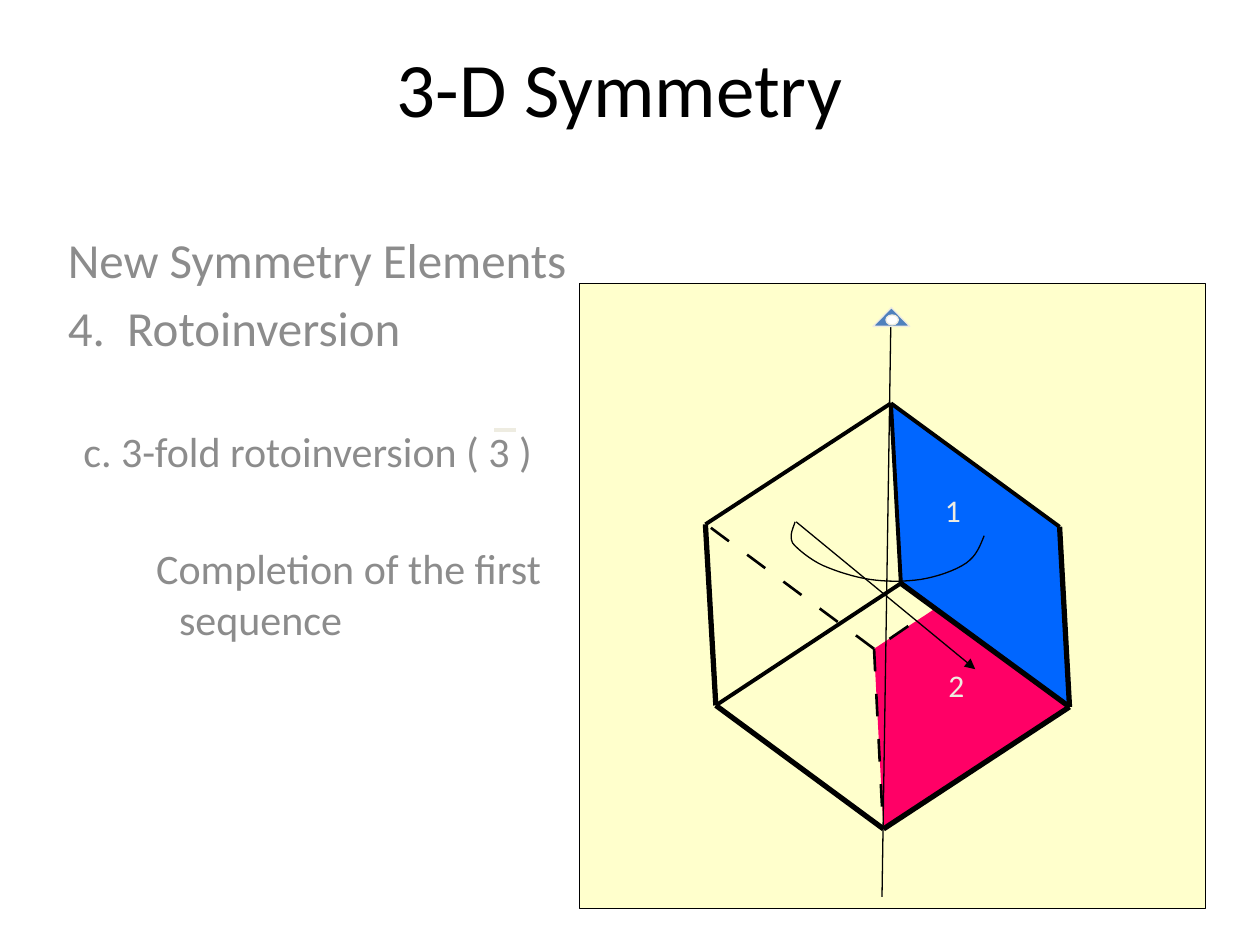
from lxml.etree import SubElement
from pptx import Presentation
from pptx.dml.color import RGBColor
from pptx.enum.shapes import MSO_CONNECTOR, MSO_SHAPE
from pptx.enum.text import MSO_ANCHOR, PP_ALIGN
from pptx.oxml.ns import qn
from pptx.util import Cm, Pt

FONT = "Calibri"
BLACK, GREY, PALE = "000000", "8C8C8C", "EEECE1"

# Cube corners, in cm
TOP, FRONT, BOTTOM, BACK = (17.96, 8.13), (18.16, 11.76), (17.81, 16.71), (17.62, 13.08)
LEFT_UP, LEFT_LOW = (14.22, 10.57), (14.43, 14.22)
RIGHT_UP, RIGHT_LOW = (21.36, 10.62), (21.56, 14.25)

# Rotation arrow: start, then two control points and an end for each curve
ARC_START = (19.84, 10.8)
ARC_CURVES = [
    ((19.76, 11.0), (19.69, 11.2), (19.48, 11.35)),
    ((19.25, 11.51), (18.87, 11.63), (18.57, 11.68)),
    ((18.24, 11.73), (17.86, 11.73), (17.53, 11.68)),
    ((17.2, 11.63), (16.84, 11.51), (16.59, 11.4)),
    ((16.33, 11.28), (16.08, 11.07), (15.98, 10.95)),
    ((15.9, 10.8), (16.0, 10.62), (16.03, 10.52)),
]

# Text, size, left margin, first-line indent, space before (pt)
BODY = [
    ("New Symmetry Elements", 28, 0, 0, 0),
    ("4.  Rotoinversion", 28, 0, 0, 5.5),
    ("c. 3-fold rotoinversion ( 3 )", 24, 1.45, -1.14, 39.5),
    ("Completion of the first sequence", 24, 2.24, -0.46, 38),
]


def rgb(color):
    return RGBColor.from_string(color)


def style(sp, fill=None, line=None, width=0.75):
    sp.shadow.inherit = False
    if fill:
        sp.fill.solid()
        sp.fill.fore_color.rgb = rgb(fill)
    else:
        sp.fill.background()
    if line:
        sp.line.color.rgb = rgb(line)
        sp.line.width = Pt(width)
    else:
        sp.line.fill.background()


def add_preset(s, kind, box, fill, line):
    sp = s.shapes.add_shape(kind, *map(Cm, box))
    style(sp, fill, line)


def add_outline(s, points, fill=None, line=None, close=True):
    pts = [(Cm(x), Cm(y)) for x, y in points]
    builder = s.shapes.build_freeform(*pts[0])
    builder.add_line_segments(pts[1:], close=close)
    style(builder.convert_to_shape(), fill, line)


def add_line(s, start, end, width=0.75, color=BLACK, arrow=False):
    cn = s.shapes.add_connector(MSO_CONNECTOR.STRAIGHT, *map(Cm, start + end))
    cn.line.color.rgb = rgb(color)
    cn.line.width = Pt(width)
    if arrow:
        SubElement(cn.line._get_or_add_ln(), qn("a:tailEnd"), type="triangle")
    SubElement(cn._element.spPr, qn("a:effectLst"))


def add_dashes(s, start, end, count):
    """Draw equal dashes with gaps of the same length."""
    steps = 2 * count - 1

    def at(i):
        return tuple(a + (b - a) * i / steps for a, b in zip(start, end))

    for i in range(0, steps, 2):
        add_line(s, at(i), at(i + 1), 1.5)


def add_run(p, text, size, color):
    r = p.add_run()
    r.text = text
    r.font.name = FONT
    r.font.size = Pt(size)
    r.font.color.rgb = rgb(color)


def add_title(s, text):
    sp = s.shapes.title
    sp.left, sp.top, sp.width, sp.height = map(Cm, (1.7, 0, 21.59, 3.48))
    tf = sp.text_frame
    tf.vertical_anchor = MSO_ANCHOR.MIDDLE
    p = tf.paragraphs[0]
    p.alignment = PP_ALIGN.CENTER
    add_run(p, text, 44, BLACK)


def add_body(s):
    tf = s.shapes.add_textbox(*map(Cm, (1.12, 4.5, 10.77, 11.4))).text_frame
    tf.word_wrap = True
    for i, (text, size, margin, indent, before) in enumerate(BODY):
        p = tf.add_paragraph() if i else tf.paragraphs[0]
        p.space_before = Pt(before)
        pPr = p._p.get_or_add_pPr()
        pPr.set("marL", str(Cm(margin)))
        pPr.set("indent", str(Cm(indent)))
        add_run(p, text, size, GREY)


def add_label(s, text, left, top):
    tf = s.shapes.add_textbox(*map(Cm, (left, top, 0.94, 1.27))).text_frame
    tf.word_wrap = False
    add_run(tf.paragraphs[0], text, 18, PALE)


def arc_points(steps=8):
    points = [ARC_START]
    for c1, c2, end in ARC_CURVES:
        start = points[-1]
        for i in range(1, steps + 1):
            t = i / steps
            u = 1 - t
            points.append(tuple(
                u**3 * a + 3 * u * u * t * b + 3 * u * t * t * c + t**3 * d
                for a, b, c, d in zip(start, c1, c2, end)))
    return points


def add_cube_edges(s):
    # Hidden edges
    add_dashes(s, (18.31, 12.62), (17.93, 12.88), 1)
    add_dashes(s, BACK, (17.78, 16.26), 4)
    add_dashes(s, BACK, (14.33, 10.64), 5)
    # Visible edges
    for start, end, width in [
        (RIGHT_UP, RIGHT_LOW, 3), (RIGHT_UP, TOP, 2.25),
        (RIGHT_LOW, FRONT, 3), (RIGHT_LOW, BOTTOM, 3),
        (TOP, FRONT, 2.25), (TOP, LEFT_UP, 2.25),
        (FRONT, LEFT_LOW, 2.25), (BOTTOM, LEFT_LOW, 3),
        (LEFT_UP, LEFT_LOW, 3),
    ]:
        add_line(s, start, end, width)


def main():
    prs = Presentation()
    prs.slide_width, prs.slide_height = Cm(25.4), Cm(19.05)
    s = prs.slides.add_slide(prs.slide_layouts[5])

    # Panel and coloured faces
    add_preset(s, MSO_SHAPE.RECTANGLE, (11.68, 5.72, 12.62, 12.6), "FFFFCC", BLACK)
    add_outline(s, [RIGHT_UP, RIGHT_LOW, BOTTOM, BACK], "FF0066")
    add_title(s, "3-D Symmetry")
    add_body(s)
    add_outline(s, [RIGHT_UP, RIGHT_LOW, FRONT, TOP], "0066FF")

    # Rotation axis and face numbers
    add_line(s, (17.96, 6.38), (17.78, 18.08))
    add_label(s, "1", 18.8, 9.78)
    add_label(s, "2", 18.87, 13.31)

    # Rotation, then inversion
    add_outline(s, arc_points(), line=BLACK, close=False)
    add_line(s, (16.05, 10.52), (19.66, 13.49), arrow=True)

    # Rotoinversion axis symbol
    add_preset(s, MSO_SHAPE.ISOSCELES_TRIANGLE, (17.6, 6.2, 0.74, 0.38), "4F81BD", PALE)
    add_preset(s, MSO_SHAPE.OVAL, (17.86, 6.35, 0.25, 0.2), "FFFFFF", PALE)

    add_cube_edges(s)

    # Bar over the 3
    add_line(s, (9.96, 8.66), (10.41, 8.66), 2.25, PALE)

    prs.save("out.pptx")


if __name__ == "__main__":
    main()
